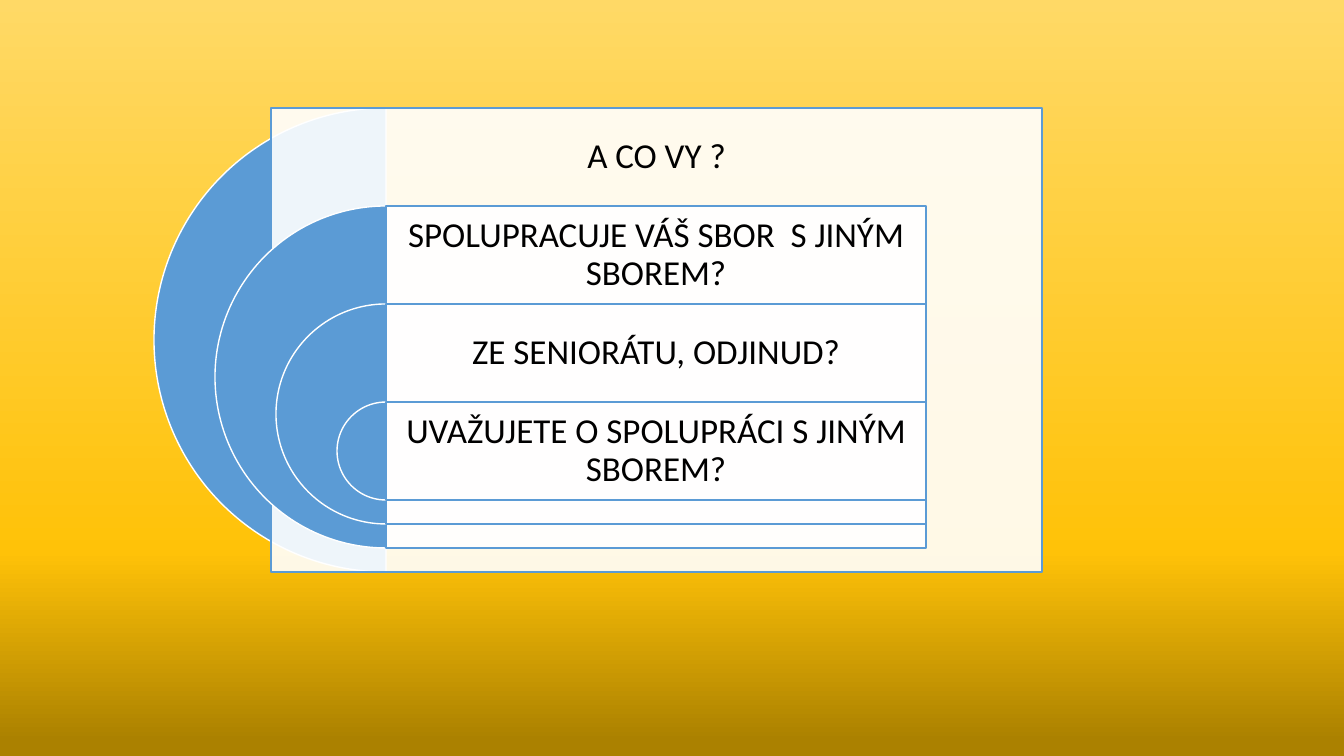
from copy import deepcopy
from dataclasses import dataclass

from lxml import etree
from pptx import Presentation
from pptx import util as u
from pptx.dml.color import RGBColor
from pptx.enum import shapes, text
from pptx.oxml.ns import qn
from pptx.shapes.autoshape import Shape
from pptx.shapes.shapetree import GroupShapes
from pptx.slide import Slide

WIDTH, HEIGHT = 1344, 756
SCALE = 12192000 / WIDTH
BLUE, WHITE, BLACK = "5B9BD5", "FFFFFF", "000000"
GRADIENT = [(0.02, "AB8100"), (0.27, "FFC208"), (1, "FFD966")]

AXIS, TOP, STEP = 386, 108, 98
OUTER, SHRINK = 464, 122


@dataclass
class Ring:
    label: str
    left: int = AXIS
    width: int = 540


RINGS = [
    Ring("A CO VY ?", 271, 771),
    Ring("SPOLUPRACUJE VÁŠ SBOR  S JINÝM SBOREM?"),
    Ring("ZE SENIORÁTU, ODJINUD?"),
    Ring("UVAŽUJETE O SPOLUPRÁCI S JINÝM SBOREM?"),
]


def px(n: int) -> u.Emu:
    return u.Emu(round(n * SCALE))


def rgb(color: str) -> RGBColor:
    return RGBColor.from_string(color)


def paint_background(slide: Slide) -> None:
    fill = slide.background.fill
    fill.gradient()
    fill.gradient_angle = 90
    stops = next(slide.element.iter(qn("a:gsLst")))
    stops.append(deepcopy(stops[0]))
    for stop, (position, color) in zip(fill.gradient_stops, GRADIENT):
        stop.position = position
        stop.color.rgb = rgb(color)


def add_shape(group: GroupShapes, kind: shapes.MSO_SHAPE, x: int, y: int, w: int, h: int,
              *, fill: str, line: str, opacity: int = 100) -> Shape:
    sp = group.add_shape(kind, px(x), px(y), px(w), px(h))
    sp.shadow.inherit = False
    sp.fill.solid()
    sp.fill.fore_color.rgb = rgb(fill)
    sp.line.color.rgb = rgb(line)
    sp.line.width = u.Pt(1)
    if opacity < 100:
        color = sp.fill._xPr.find(qn("a:solidFill"))[0]
        etree.SubElement(color, qn("a:alpha"), val=str(opacity * 1000))
    return sp


def add_text(group: GroupShapes, label: str, x: int, y: int, w: int, h: int,
             *, size: int = 25, font: str = "Calibri", color: str = BLACK) -> None:
    tf = group.add_textbox(px(x), px(y), px(w), px(h)).text_frame
    tf.word_wrap = True
    tf.vertical_anchor = text.MSO_ANCHOR.MIDDLE
    tf.margin_left = tf.margin_right = tf.margin_top = tf.margin_bottom = px(10)
    p = tf.paragraphs[0]
    p.alignment = text.PP_ALIGN.CENTER
    p.line_spacing = 0.9
    r = p.add_run()
    r.text = label
    r.font.size = u.Pt(size)
    r.font.name = font
    r.font.color.rgb = rgb(color)


def add_ring(group: GroupShapes, index: int, ring: Ring) -> None:
    size = OUTER - SHRINK * index
    y = TOP + STEP * index
    pie = add_shape(group, shapes.MSO_SHAPE.PIE, AXIS - size // 2, y, size, size,
                    fill=BLUE, line=WHITE)
    pie.adjustments[0], pie.adjustments[1] = 54, 162
    add_shape(group, shapes.MSO_SHAPE.RECTANGLE, ring.left, y, ring.width, size,
              fill=WHITE, line=BLUE, opacity=90)
    add_text(group, ring.label, ring.left, y, ring.width, STEP)


def main() -> None:
    """Build the slide of nested half-circles with their questions."""
    prs = Presentation()
    prs.slide_width, prs.slide_height = px(WIDTH), px(HEIGHT)
    slide = prs.slides.add_slide(prs.slide_layouts[6])
    paint_background(slide)
    group = slide.shapes.add_group_shape().shapes
    for index, ring in enumerate(RINGS):
        add_ring(group, index, ring)
    prs.save("out.pptx")


if __name__ == "__main__":
    main()
